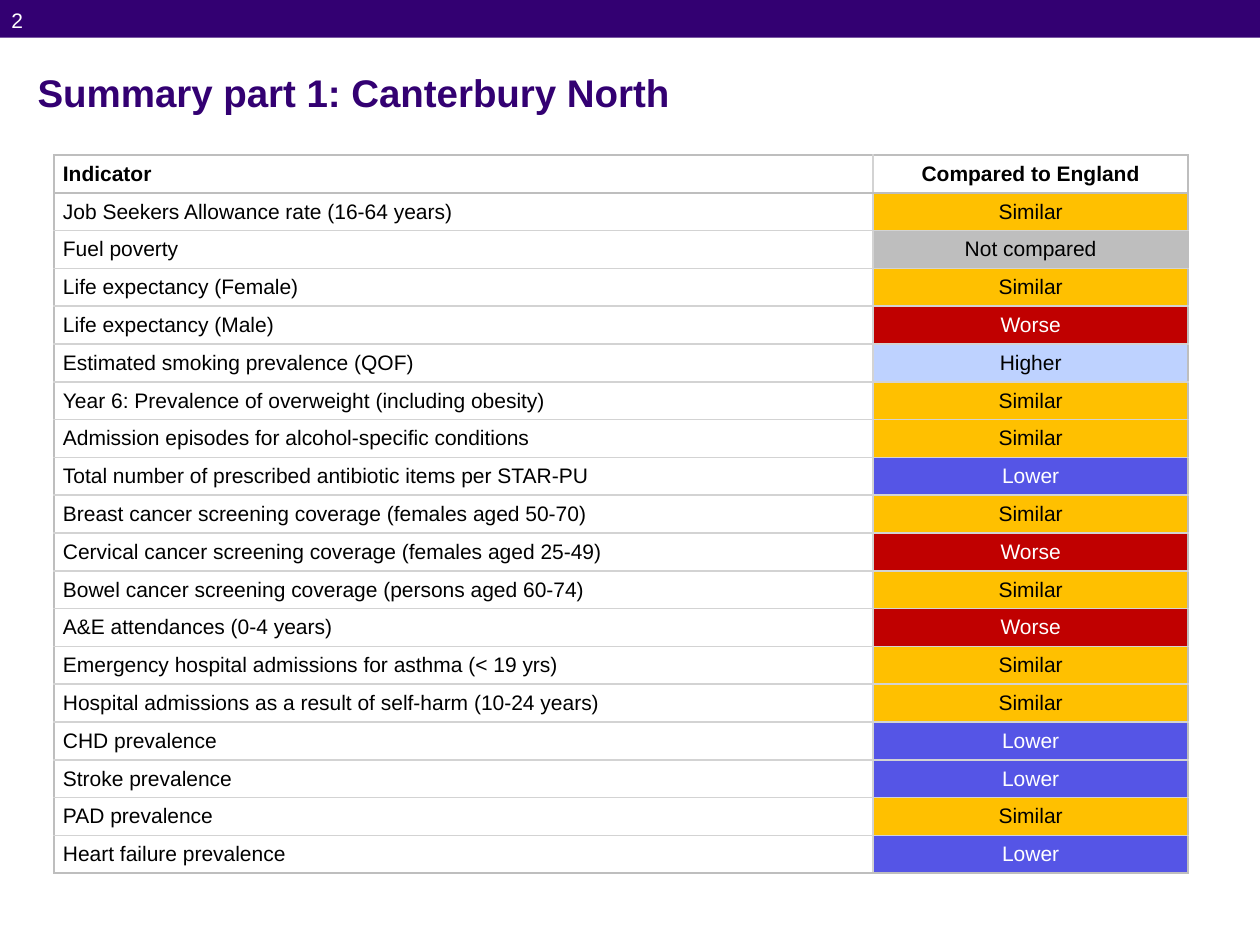
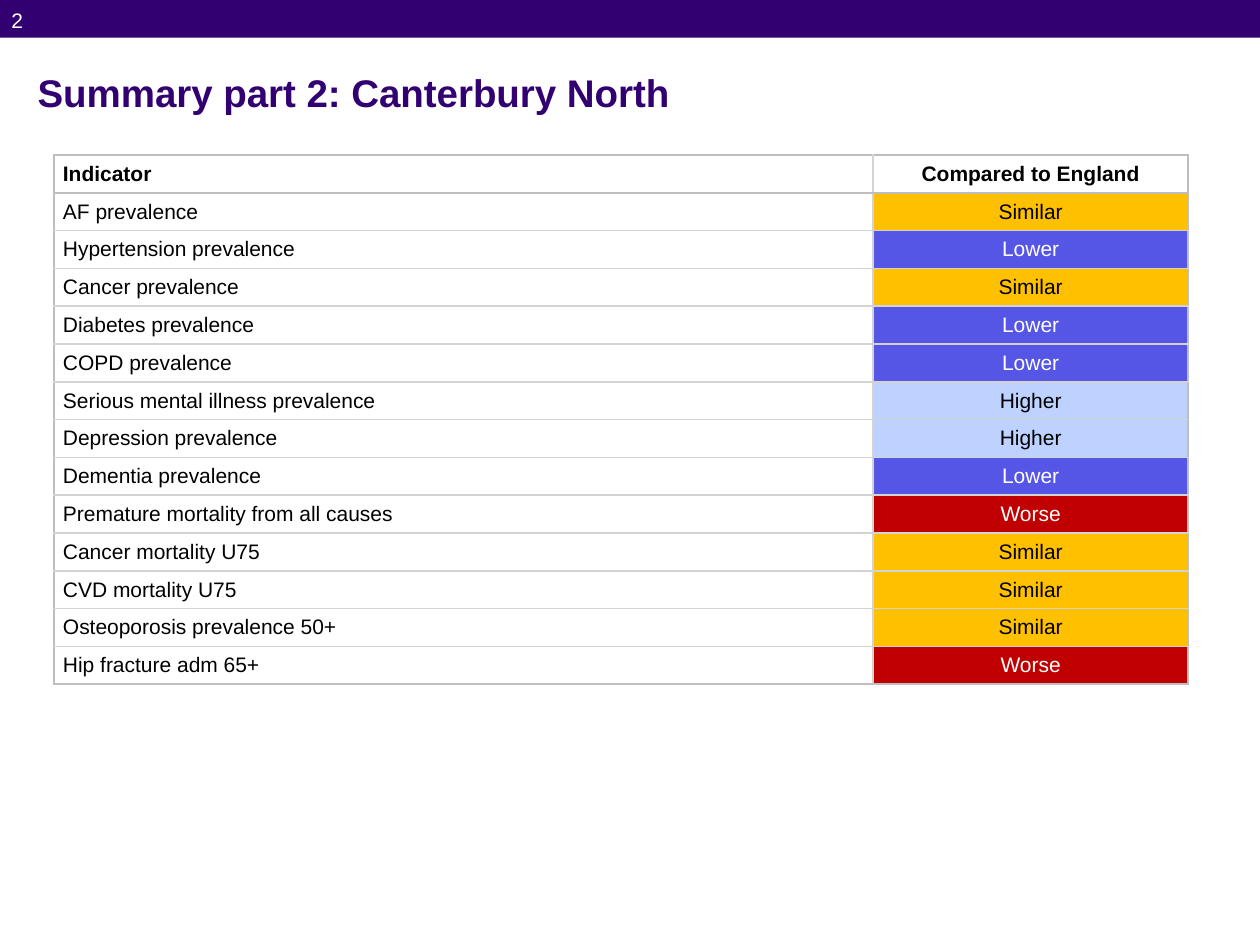
from lxml import etree
from pptx import Presentation
from pptx.dml.color import RGBColor
from pptx.enum.shapes import MSO_SHAPE
from pptx.enum.text import MSO_ANCHOR, PP_ALIGN
from pptx.oxml.ns import qn
from pptx.util import Inches, Pt

FONT = "Arial"
COLOURS = {
    "purple": "330072",
    "white": "FFFFFF",
    "black": "000000",
    "outer_border": "BEBEBE",
    "inner_border": "D3D3D3",
    "amber": "FFC000",
    "red": "C00000",
    "blue": "5555E6",
    "light_blue": "BED2FF",
    "grey": "BEBEBE",
}
# Fill and text colour of each comparison result
RESULT_STYLES = {
    "Similar": ("amber", "black"),
    "Worse": ("red", "white"),
    "Lower": ("blue", "white"),
    "Higher": ("light_blue", "black"),
    "Not compared": ("grey", "black"),
}
HEADINGS = ("Indicator", "Compared to England")
COLUMN_WIDTHS = (6.5, 2.5)
ROW_HEIGHT = 0.3

SUMMARIES = {
    "Summary part 1: Canterbury North": [
        ("Job Seekers Allowance rate (16-64 years)", "Similar"),
        ("Fuel poverty", "Not compared"),
        ("Life expectancy (Female)", "Similar"),
        ("Life expectancy (Male)", "Worse"),
        ("Estimated smoking prevalence (QOF)", "Higher"),
        ("Year 6: Prevalence of overweight (including obesity)", "Similar"),
        ("Admission episodes for alcohol-specific conditions", "Similar"),
        ("Total number of prescribed antibiotic items per STAR-PU", "Lower"),
        ("Breast cancer screening coverage (females aged 50-70)", "Similar"),
        ("Cervical cancer screening coverage (females aged 25-49)", "Worse"),
        ("Bowel cancer screening coverage (persons aged 60-74)", "Similar"),
        ("A&E attendances (0-4 years)", "Worse"),
        ("Emergency hospital admissions for asthma (< 19 yrs)", "Similar"),
        ("Hospital admissions as a result of self-harm (10-24 years)", "Similar"),
        ("CHD prevalence", "Lower"),
        ("Stroke prevalence", "Lower"),
        ("PAD prevalence", "Similar"),
        ("Heart failure prevalence", "Lower"),
    ],
    "Summary part 2: Canterbury North": [
        ("AF prevalence", "Similar"),
        ("Hypertension prevalence", "Lower"),
        ("Cancer prevalence", "Similar"),
        ("Diabetes prevalence", "Lower"),
        ("COPD prevalence", "Lower"),
        ("Serious mental illness prevalence", "Higher"),
        ("Depression prevalence", "Higher"),
        ("Dementia prevalence", "Lower"),
        ("Premature mortality from all causes", "Worse"),
        ("Cancer mortality U75", "Similar"),
        ("CVD mortality U75", "Similar"),
        ("Osteoporosis prevalence 50+", "Similar"),
        ("Hip fracture adm 65+", "Worse"),
    ],
}


def colour(name):
    return RGBColor.from_string(COLOURS[name])


def write_text(text_frame, text, size=12, color="black", bold=False,
               align=PP_ALIGN.LEFT, spacing=0):
    paragraph = text_frame.paragraphs[0]
    paragraph.alignment = align
    paragraph.space_before = paragraph.space_after = Pt(spacing)
    run = paragraph.add_run()
    run.text = text
    run.font.name = FONT
    run.font.size = Pt(size)
    run.font.bold = bold
    run.font.color.rgb = colour(color)


def add_text_box(slide, box, text, margin_left, margin_top, **text_format):
    text_frame = slide.shapes.add_textbox(*map(Inches, box)).text_frame
    text_frame.word_wrap = True
    text_frame.margin_left = Inches(margin_left)
    text_frame.margin_top = Inches(margin_top)
    write_text(text_frame, text, **text_format)


def add_header(slide, box, title, number):
    left, top, width, height = box
    # Band
    band = slide.shapes.add_shape(MSO_SHAPE.RECTANGLE, *map(Inches, box))
    band.shadow.inherit = False
    band.fill.solid()
    band.fill.fore_color.rgb = colour("purple")
    band.line.fill.background()
    # Title
    add_text_box(slide, (left + 0.2, top + height + 0.17, width - 0.39, 0.45), title,
                 0.1, 0.08, size=22, color="purple", bold=True)
    # Page number
    add_text_box(slide, (left, top, 0.63, 0.63), number, 0.09, 0.06, color="white")


def set_borders(cell, border_colours):
    properties = cell._tc.get_or_add_tcPr()
    for side, name in border_colours.items():
        line = etree.SubElement(properties, qn(f"a:ln{side}"), w=str(Pt(1)))
        fill = etree.SubElement(line, qn("a:solidFill"))
        etree.SubElement(fill, qn("a:srgbClr"), val=COLOURS[name])


def format_cell(cell, text, fill=None, **text_format):
    cell.margin_left = cell.margin_right = Inches(0.07)
    cell.margin_top = cell.margin_bottom = 0
    cell.vertical_anchor = MSO_ANCHOR.MIDDLE
    if fill:
        cell.fill.solid()
        cell.fill.fore_color.rgb = colour(fill)
    else:
        cell.fill.background()
    write_text(cell.text_frame, text, spacing=5, **text_format)


def add_indicator_table(slide, left, top, indicators):
    rows = [HEADINGS, *indicators]
    last = len(rows) - 1
    table = slide.shapes.add_table(
        len(rows), len(HEADINGS), Inches(left), Inches(top),
        Inches(sum(COLUMN_WIDTHS)), Inches(ROW_HEIGHT * len(rows))).table
    table.horz_banding = False
    for column, width in zip(table.columns, COLUMN_WIDTHS):
        column.width = Inches(width)

    for index, (indicator, result) in enumerate(rows):
        table.rows[index].height = Inches(ROW_HEIGHT)
        name_cell, result_cell = table.rows[index].cells
        # Darker lines around the table and the heading row
        above = "outer_border" if index <= 1 else "inner_border"
        below = "outer_border" if index in (0, last) else "inner_border"
        set_borders(name_cell, {"L": "outer_border", "R": "inner_border",
                                "T": above, "B": below})
        set_borders(result_cell, {"L": "inner_border", "R": "outer_border",
                                  "T": above, "B": below})
        fill, color = RESULT_STYLES.get(result, (None, "black"))
        heading = index == 0
        format_cell(name_cell, indicator, bold=heading)
        format_cell(result_cell, result, fill=fill, color=color, bold=heading,
                    align=PP_ALIGN.CENTER)


def add_summary_slide(presentation, title, indicators):
    slide = presentation.slides.add_slide(presentation.slide_layouts[6])
    add_header(slide, (0, 0, 10, 0.3), title, "2")
    add_indicator_table(slide, 0.43, 1.23, indicators)


def main():
    presentation = Presentation()
    presentation.slide_width = Inches(10)
    presentation.slide_height = Inches(7.5)
    for title, indicators in SUMMARIES.items():
        add_summary_slide(presentation, title, indicators)
    presentation.save("out.pptx")


if __name__ == "__main__":
    main()
